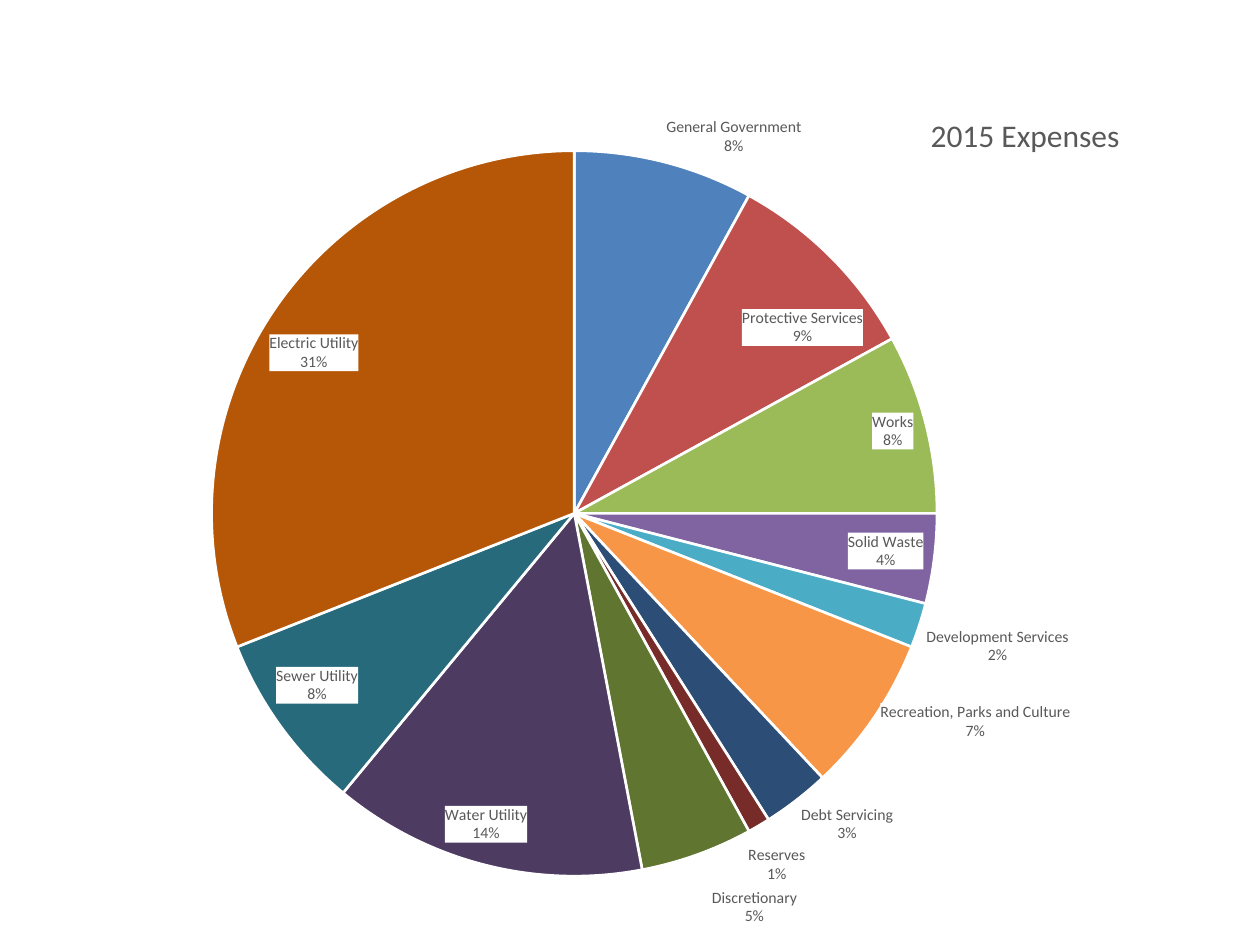
from copy import deepcopy
from dataclasses import dataclass

from lxml.etree import SubElement
from pptx import Presentation
from pptx.chart.data import CategoryChartData
from pptx.dml.color import RGBColor
from pptx.enum.chart import XL_CHART_TYPE, XL_LABEL_POSITION
from pptx.oxml import parse_xml
from pptx.oxml.ns import nsdecls, qn
from pptx.util import Cm, Pt


@dataclass(frozen=True)
class Theme:
    """Colours and type of the slide."""
    font: str = "Calibri"
    text: str = "595959"
    paper: str = "FFFFFF"
    title_size: int = 18
    label_size: int = 9
    base_size: int = 10
    border: float = 1.5


THEME = Theme()

EXPENSES = [
    ("General Government", 8, "4F81BD"),
    ("Protective Services", 9, "C0504D"),
    ("Works", 8, "9BBB59"),
    ("Solid Waste", 4, "8064A2"),
    ("Development Services", 2, "4BACC6"),
    ("Recreation, Parks and Culture", 7, "F79646"),
    ("Debt Servicing", 3, "2C4D75"),
    ("Reserves", 1, "772C2A"),
    ("Discretionary", 5, "5F7530"),
    ("Water Utility", 14, "4D3B62"),
    ("Sewer Utility", 8, "276A7C"),
    ("Electric Utility", 31, "B65708"),
]

LABEL_SHIFTS = {
    "Recreation, Parks and Culture": (0, -0.02),
    "Discretionary": (0.01, 0.03),
}


def style_font(font, size, colour):
    """Apply the theme typeface with a size and colour."""
    font.name = THEME.font
    font.size = Pt(size)
    font.bold = False
    font.color.rgb = RGBColor.from_string(colour)


def set_layout(parent, index, mode="edge", **fractions):
    """Give a chart part a manual layout in fractions of the chart."""
    for previous in parent.findall(qn("c:layout")):
        parent.remove(previous)
    layout = parse_xml(f"<c:layout {nsdecls('c')}/>")
    manual = SubElement(layout, qn("c:manualLayout"))
    if "w" in fractions:
        SubElement(manual, qn("c:layoutTarget")).set("val", "inner")
    for axis in "xy":
        SubElement(manual, qn(f"c:{axis}Mode")).set("val", mode)
    for side, fraction in fractions.items():
        SubElement(manual, qn(f"c:{side}")).set("val", str(fraction))
    parent.insert(index, layout)


def add_chart_heading(chart, heading):
    """Place the chart heading at the upper right."""
    frame = chart.chart_title.text_frame
    frame.text = heading
    style_font(frame.paragraphs[0].runs[0].font, THEME.title_size, THEME.text)
    chart.chart_title.include_in_layout = False
    set_layout(frame._txBody.getparent().getparent(), 1, x=0.74, y=0.1)


def shift_labels(label_group, names):
    """Move single labels away from their automatic places."""
    shared = [part for part in label_group
              if part.tag != qn("c:showLeaderLines")]
    for position, (name, (x, y)) in enumerate(LABEL_SHIFTS.items()):
        label = parse_xml(f"<c:dLbl {nsdecls('c')}/>")
        SubElement(label, qn("c:idx")).set("val", str(names.index(name)))
        label.extend([deepcopy(part) for part in shared])
        set_layout(label, 1, mode="factor", x=x, y=y)
        label_group.insert(position, label)


def add_slice_labels(series, names):
    """Show category and percentage on white label boxes."""
    labels = series.data_labels
    labels.show_value = False
    labels.show_category_name = True
    labels.show_percentage = True
    labels.number_format = "0%"
    labels.number_format_is_linked = False
    labels.position = XL_LABEL_POSITION.BEST_FIT
    style_font(labels.font, THEME.label_size, THEME.text)
    group = labels._element
    group.find(qn("c:numFmt")).addnext(parse_xml(
        f"<c:spPr {nsdecls('c', 'a')}><a:solidFill>"
        f'<a:srgbClr val="{THEME.paper}"/></a:solidFill></c:spPr>'))
    for leader in group.findall(qn("c:showLeaderLines")):
        group.remove(leader)
    SubElement(group, qn("c:separator")).text = "\n"
    SubElement(group, qn("c:showLeaderLines")).set("val", "0")
    shift_labels(group, names)


def add_expense_pie(slide, left, top, width, height):
    """Draw the expense pie in the given box."""
    names, shares, colours = zip(*EXPENSES)
    expense_data = CategoryChartData()
    expense_data.categories = names
    expense_data.add_series("Series 1", shares)
    chart = slide.shapes.add_chart(
        XL_CHART_TYPE.PIE, left, top, width, height, expense_data).chart
    chart.has_legend = False
    chart.font.name = THEME.font
    chart.font.size = Pt(THEME.base_size)
    add_chart_heading(chart, "2015 Expenses")

    plot = chart.plots[0]
    plot.vary_by_categories = True
    expenses = plot.series[0]
    for index, colour in enumerate(colours):
        wedge = expenses.points[index].format
        wedge.fill.solid()
        wedge.fill.fore_color.rgb = RGBColor.from_string(colour)
        wedge.line.color.rgb = RGBColor.from_string(THEME.paper)
        wedge.line.width = Pt(THEME.border)
    add_slice_labels(expenses, names)
    set_layout(plot._element.getparent(), 0, x=0.16, y=0.14, w=0.59, h=0.81)


def main():
    """Build and save the expenses slide."""
    presentation = Presentation()
    presentation.slide_width = Cm(25.4)
    presentation.slide_height = Cm(19.05)
    slide = presentation.slides.add_slide(presentation.slide_layouts[6])
    add_expense_pie(slide, Cm(0.3), Cm(0.33), Cm(24.79), Cm(18.39))
    presentation.save("out.pptx")


if __name__ == "__main__":
    main()
